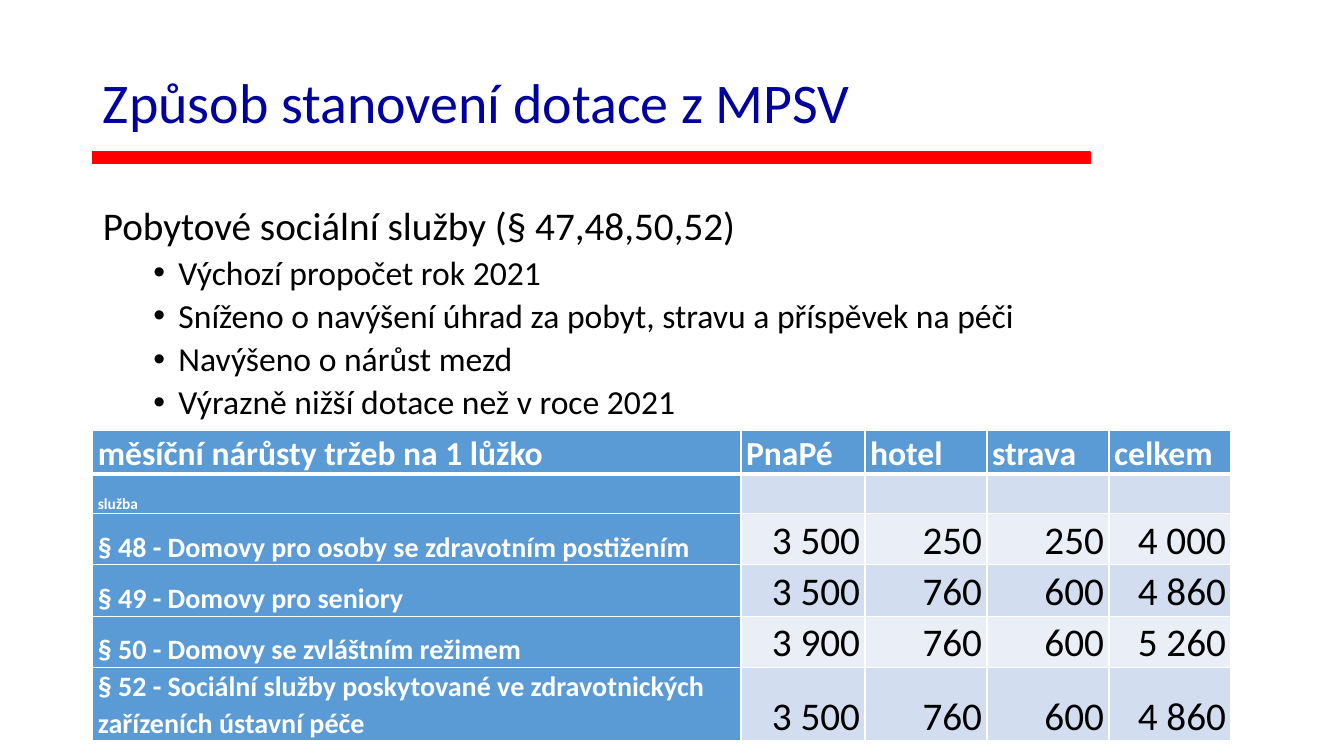
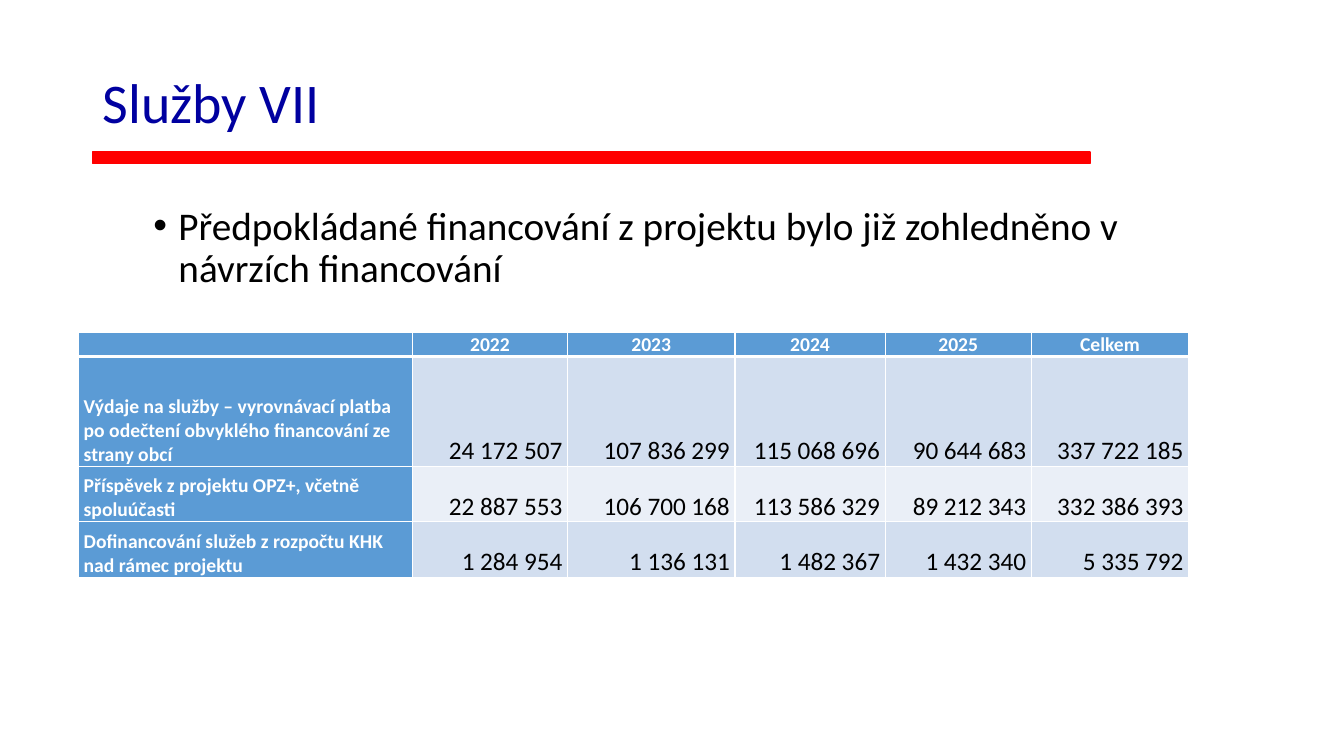
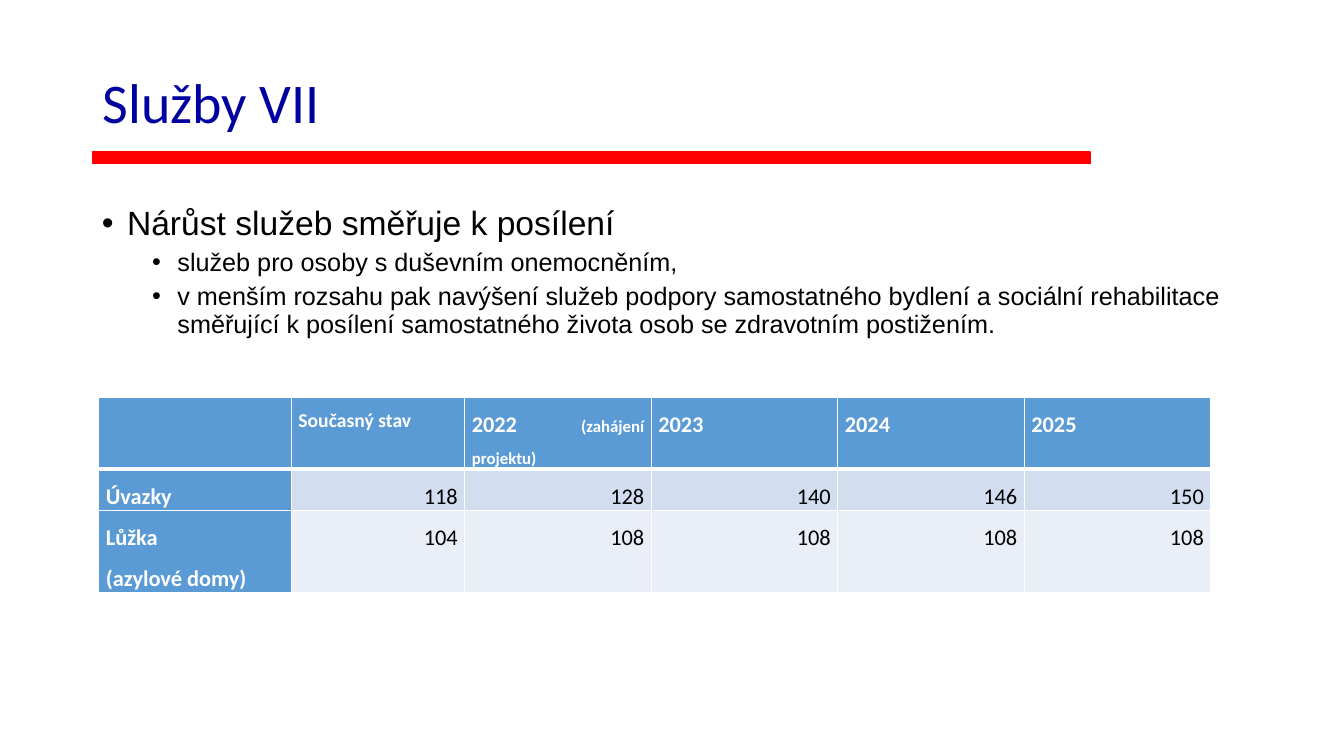
import dataclasses

import pptx
import pptx.dml.color
import pptx.enum.shapes
import pptx.enum.text
import pptx.oxml
import pptx.oxml.ns
import pptx.util

PX = 9144  # EMU per px, 100 px to the inch
ALIGN = pptx.enum.text.PP_ALIGN
ANCHOR = pptx.enum.text.MSO_ANCHOR

NAVY, RED, BLACK, WHITE = "0000A0", "FF0000", "000000", "FFFFFF"
HEAD_FILL = "5B9BD5"
BAND_FILLS = ("D2DEEF", "EAEFF7")

TITLE_BOX = (92, 40, 1150, 121)
BAR_BOX = (92, 151, 989, 11)
BODY_BOX = (92, 200, 1150, 476)


@dataclasses.dataclass
class TableStyle:
    head_size: int
    label_size: int
    value_size: int
    margin: int = 5
    head_align: ALIGN = ALIGN.LEFT
    label_align: ALIGN = ALIGN.LEFT
    anchor: ANCHOR = ANCHOR.BOTTOM
    line_spacing: float = 1.0
    space_after: int = 0


def px(n):
    return pptx.util.Emu(n * PX)


def rgb(color):
    return pptx.dml.color.RGBColor.from_string(color)


def place(sp, box):
    sp.left, sp.top, sp.width, sp.height = map(px, box)


def add_run(p, text, size, color=BLACK, font="Calibri", bold=False):
    r = p.add_run()
    r.text = text
    r.font.size = pptx.util.Pt(size)
    r.font.name = font
    r.font.bold = bold
    r.font.color.rgb = rgb(color)


def sub_element(parent, tag, **attrs):
    el = parent.makeelement(pptx.oxml.ns.qn(tag), attrs)
    parent.append(el)
    return el


def set_bullet(p, level):
    """Indent by level; level 0 has no bullet."""
    p.level = level
    ppr = p._p.get_or_add_pPr()
    ppr.set("marL", str(px(50 * level + 25 if level else 0)))
    ppr.set("indent", str(px(-25 if level else 0)))
    if level:
        sub_element(ppr, "a:buFont", typeface="Arial")
        sub_element(ppr, "a:buChar", char="•")
    else:
        sub_element(ppr, "a:buNone")


def set_borders(cell, top, bottom):
    tcpr = cell._tc.get_or_add_tcPr()
    for side, width in (("L", 1), ("R", 1), ("T", top), ("B", bottom)):
        ln = sub_element(tcpr, f"a:ln{side}", w=str(pptx.util.Pt(width)))
        sub_element(sub_element(ln, "a:solidFill"), "a:srgbClr", val=WHITE)


def add_title(s, text):
    sp = s.shapes.title
    place(sp, TITLE_BOX)
    tf = sp.text_frame
    tf.auto_size = pptx.enum.text.MSO_AUTO_SIZE.NONE
    tf.vertical_anchor = ANCHOR.MIDDLE
    p = tf.paragraphs[0]
    p.alignment = ALIGN.LEFT
    add_run(p, text, 40, NAVY)


def add_bar(s):
    sp = s.shapes.add_shape(pptx.enum.shapes.MSO_SHAPE.RECTANGLE, *map(px, BAR_BOX))
    sp.shadow.inherit = False
    sp.fill.solid()
    sp.fill.fore_color.rgb = rgb(RED)
    sp.line.color.rgb = rgb(RED)
    sp.line.width = pptx.util.Pt(1)


def add_body(s, items, box=BODY_BOX, font="Calibri"):
    """Fill the body placeholder with (level, size, text) items."""
    sp = s.placeholders[1]
    place(sp, box)
    tf = sp.text_frame
    tf.auto_size = pptx.enum.text.MSO_AUTO_SIZE.NONE
    for i, (level, size, text) in enumerate(items):
        p = tf.add_paragraph() if i else tf.paragraphs[0]
        p.line_spacing = 0.9
        p.space_before = pptx.util.Pt(5 if level else 10)
        set_bullet(p, level)
        add_run(p, text, size, font=font)


def fill_cell(cell, content, size, align, color, bold, style):
    """Write a string, or a list of (text, size) runs; a newline is a line break."""
    cell.margin_left = cell.margin_right = px(style.margin)
    cell.margin_top = cell.margin_bottom = 0
    cell.vertical_anchor = style.anchor
    p = cell.text_frame.paragraphs[0]
    p.alignment = align
    p.line_spacing = style.line_spacing
    p.space_after = pptx.util.Pt(style.space_after)
    if not content:
        sub_element(p._p, "a:endParaRPr", sz=str(size * 100))
        return
    runs = [(content, size)] if isinstance(content, str) else content
    for text, run_size in runs:
        for i, line in enumerate(text.split("\n")):
            if i:
                p.add_line_break()
            add_run(p, line, run_size, color, bold=bold)


def add_table(s, left, top, col_widths, row_heights, rows, style):
    box = (left, top, sum(col_widths), sum(row_heights))
    table = s.shapes.add_table(len(rows), len(col_widths), *map(px, box)).table
    for col, width in zip(table.columns, col_widths):
        col.width = px(width)
    for row, height in zip(table.rows, row_heights):
        row.height = px(height)
    for i, row in enumerate(rows):
        for j, content in enumerate(row):
            cell = table.cell(i, j)
            set_borders(cell, 3 if i == 1 else 1, 1 if i else 3)
            is_value = i > 0 and j > 0
            cell.fill.solid()
            cell.fill.fore_color.rgb = rgb(BAND_FILLS[(i - 1) % 2] if is_value else HEAD_FILL)
            if is_value:
                size, align = style.value_size, ALIGN.RIGHT
            elif i:
                size, align = style.label_size, style.label_align
            else:
                size, align = style.head_size, style.head_align
            # An empty value takes a small size, so that it does not stretch its row.
            if not content:
                size = min(size, style.label_size)
            fill_cell(cell, content, size, align, BLACK if is_value else WHITE,
                      not is_value, style)


def add_slide(prs, title):
    s = prs.slides.add_slide(prs.slide_layouts[1])
    add_title(s, title)
    add_bar(s)
    return s


def grant_slide(prs):
    s = add_slide(prs, "Způsob stanovení dotace z MPSV")
    add_body(s, [
        (0, 28, "Pobytové sociální služby (§ 47,48,50,52)"),
        (1, 24, "Výchozí propočet rok 2021"),
        (1, 24, "Sníženo o navýšení úhrad za pobyt, stravu a příspěvek na péči"),
        (1, 24, "Navýšeno o nárůst mezd"),
        (1, 24, "Výrazně nižší dotace než v roce 2021"),
    ])
    rows = [
        ["měsíční nárůsty tržeb na 1 lůžko", "PnaPé", "hotel", "strava", "celkem"],
        [[("služba", 11)], "", "", "", ""],
        ["§ 48 - Domovy pro osoby se zdravotním postižením", "3 500", "250", "250", "4 000"],
        ["§ 49 - Domovy pro seniory", "3 500", "760", "600", "4 860"],
        ["§ 50 - Domovy se zvláštním režimem", "3 900", "760", "600", "5 260"],
        ["§ 52 - Sociální služby poskytované ve zdravotnických zařízeních ústavní péče",
         "3 500", "760", "600", "4 860"],
    ]
    add_table(s, 92, 427, [643, 123, 121, 121, 121], [39] * 5 + [71], rows,
              TableStyle(24, 20, 28, line_spacing=1.07, space_after=8))


def funding_slide(prs):
    s = add_slide(prs, "Služby VII")
    add_body(s, [(1, 28, "Předpokládané financování z projektu bylo již zohledněno "
                         "v návrzích financování")])
    rows = [
        ["", "2022", "2023", "2024", "2025", "Celkem"],
        ["Výdaje na služby – vyrovnávací platba po odečtení obvyklého financování ze strany obcí",
         "24 172 507", "107 836 299", "115 068 696", "90 644 683", "337 722 185"],
        ["Příspěvek z projektu OPZ+, včetně spoluúčasti",
         "22 887 553", "106 700 168", "113 586 329", "89 212 343", "332 386 393"],
        ["Dofinancování služeb z rozpočtu KHK nad rámec projektu",
         "1 284 954", "1 136 131", "1 482 367", "1 432 340", "5 335 792"],
    ]
    add_table(s, 78, 330, [331, 154, 166, 149, 145, 156], [21, 109, 55, 55], rows,
              TableStyle(14, 14, 18, head_align=ALIGN.CENTER))


def capacity_slide(prs):
    s = add_slide(prs, "Služby VII")
    add_body(s, [
        (1, 24, "Nárůst služeb směřuje k posílení"),
        (2, 18, "služeb pro osoby s duševním onemocněním,"),
        (2, 18, "v menším rozsahu pak navýšení služeb podpory samostatného bydlení "
                "a sociální rehabilitace směřující k posílení samostatného života osob "
                "se zdravotním postižením."),
    ], box=(41, 200, 1200, 476), font="Arial")
    rows = [
        ["", [("Současný stav", 14)], [("2022 ", 16), ("(zahájení projektu)", 12)],
         "2023", "2024", "2025"],
        ["Úvazky", "118", "128", "140", "146", "150"],
        ["Lůžka\n(azylové domy)", "104", "108", "108", "108", "108"],
    ]
    add_table(s, 98, 394, [191, 172] + [185] * 4, [36, 19, 40], rows,
              TableStyle(16, 16, 16, margin=7, head_align=ALIGN.JUSTIFY,
                         label_align=ALIGN.JUSTIFY, anchor=ANCHOR.TOP, line_spacing=1.5))


def main():
    prs = pptx.Presentation()
    prs.slide_width, prs.slide_height = px(1333), px(750)
    grant_slide(prs)
    funding_slide(prs)
    capacity_slide(prs)
    prs.save("out.pptx")


if __name__ == "__main__":
    main()
